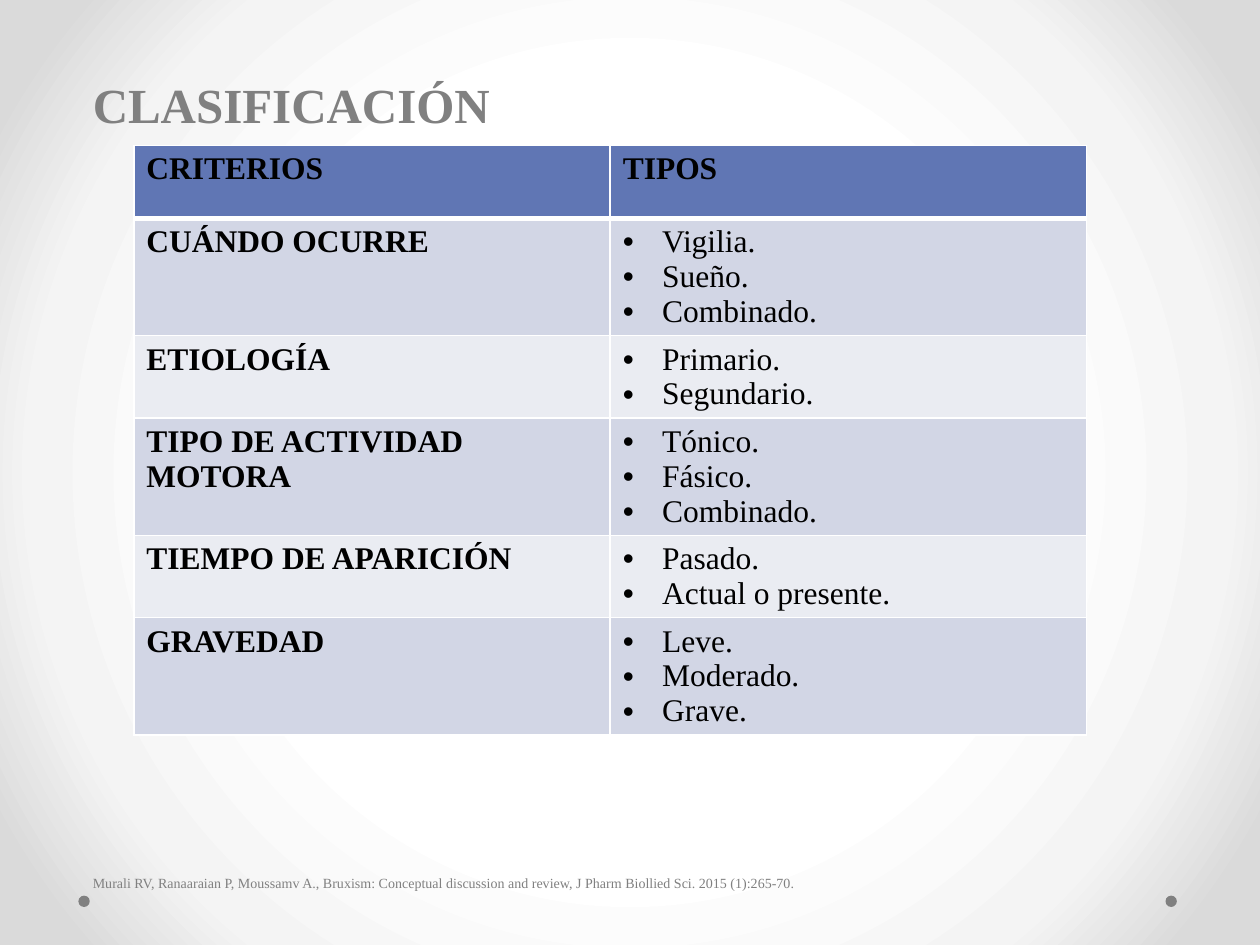
"""Build the bruxism classification slide with its criteria table and source line."""
from lxml.etree import SubElement
from pptx import Presentation
from pptx.dml.color import RGBColor
from pptx.enum.shapes import MSO_SHAPE as Preset
from pptx.enum.text import MSO_ANCHOR as Anchor, MSO_AUTO_SIZE as AutoSize, PP_ALIGN as Align
from pptx.oxml.ns import qn
from pptx.util import Pt

CRITERIA = [
    ("CUÁNDO OCURRE", ["Vigilia.", "Sueño.", "Combinado."]),
    ("ETIOLOGÍA", ["Primario.", "Segundario."]),
    ("TIPO DE ACTIVIDAD MOTORA", ["Tónico.", "Fásico.", "Combinado."]),
    ("TIEMPO DE APARICIÓN", ["Pasado.", "Actual o presente."]),
    ("GRAVEDAD", ["Leve.", "Moderado.", "Grave."]),
]
CITATION = ("Murali RV, Ranaaraian P, Moussamv A., Bruxism: Conceptual discussion and review, "
            "J Pharm Biollied Sci. 2015 (1):265-70.")


def color(value):
    return RGBColor.from_string(value)


def apply(target, values):
    for name, value in values.items():
        setattr(target, name, value)


def add_element(parent, tag, **attributes):
    return SubElement(parent, qn(tag), attributes)


def add_solid(parent, value):
    add_element(add_element(parent, "a:solidFill"), "a:srgbClr", val=value)


class SlideBuilder:
    FONT, GRAY, BLACK, WHITE = "Times New Roman", "808080", "000000", "FFFFFF"
    HEADER, BANDS = "6076B4", ("D2D6E5", "EAECF2")
    HEADER_HEIGHT, LINE_HEIGHT, CELL_PADDING = 41.8, 19.9, 7.2
    BULLET_INDENT = 22.5
    FRAME = {"word_wrap": True, "auto_size": AutoSize.NONE, "vertical_anchor": Anchor.MIDDLE,
             "margin_left": 0, "margin_right": 0, "margin_top": 0, "margin_bottom": 0}
    PARAGRAPH = {"alignment": Align.LEFT, "space_before": Pt(0), "space_after": Pt(0)}

    def __init__(self, deck):
        self.slide = deck.slides.add_slide(deck.slide_layouts[1])

    def background(self, stops):
        self.slide.background.fill.solid()
        properties = next(self.slide.element.iter(qn("p:bgPr")))
        properties.remove(properties.find(qn("a:solidFill")))
        gradient = add_element(properties, "a:gradFill", rotWithShape="1")
        properties.insert(0, gradient)
        stop_list = add_element(gradient, "a:gsLst")
        for position, value in stops:
            stop = add_element(stop_list, "a:gs", pos=str(position * 1000))
            add_element(stop, "a:srgbClr", val=value)
        circle = add_element(gradient, "a:path", path="circle")
        add_element(circle, "a:fillToRect", **dict.fromkeys("ltrb", "50000"))

    def dot(self, left, top, size):
        dot = self.slide.shapes.add_shape(Preset.OVAL, Pt(left), Pt(top), Pt(size), Pt(size))
        dot.shadow.inherit = False
        dot.fill.solid()
        dot.fill.fore_color.rgb = color(self.GRAY)
        dot.line.fill.background()

    def add_text(self, paragraph, text, size, value, bold=False, bulleted=False):
        run = paragraph.add_run()
        run.text = text
        apply(run.font, {"name": self.FONT, "size": Pt(size), "bold": bold})
        run.font.color.rgb = color(value)
        apply(paragraph, self.PARAGRAPH)
        properties = paragraph._p.get_or_add_pPr()
        indent = Pt(self.BULLET_INDENT) if bulleted else 0
        properties.set("marL", str(indent))
        properties.set("indent", str(-indent))
        if bulleted:
            add_element(properties, "a:buFont", typeface="Arial")
            add_element(properties, "a:buChar", char="•")
        else:
            add_element(properties, "a:buNone")

    def placeholder(self, index, box, text, size, bold=False):
        holder = self.slide.placeholders[index]
        apply(holder, dict(zip(("left", "top", "width", "height"), map(Pt, box))))
        apply(holder.text_frame, self.FRAME)
        self.add_text(holder.text_frame.paragraphs[0], text, size, self.GRAY, bold)

    def cell(self, cell, lines, fill, bottom=1, **style):
        properties = cell._tc.get_or_add_tcPr()
        for side, width in zip("LRTB", (1, 1, 1, bottom)):
            border = add_element(properties, f"a:ln{side}", w=str(Pt(width)))
            add_solid(border, self.WHITE)
        cell.fill.solid()
        cell.fill.fore_color.rgb = color(fill)
        for number, line in enumerate(lines):
            frame = cell.text_frame
            paragraph = frame.add_paragraph() if number else frame.paragraphs[0]
            self.add_text(paragraph, line, 18, self.BLACK, **style)

    def table(self, left, top, width, headings, criteria):
        heights = [self.HEADER_HEIGHT] + [
            self.CELL_PADDING + self.LINE_HEIGHT * len(types) for _, types in criteria]
        table = self.slide.shapes.add_table(
            len(heights), len(headings), Pt(left), Pt(top), Pt(width), Pt(sum(heights))).table
        for row, height in zip(table.rows, heights):
            row.height = Pt(height)
        for column, heading in enumerate(headings):
            self.cell(table.cell(0, column), [heading], self.HEADER, bottom=3, bold=True)
        for row, (criterion, types) in enumerate(criteria, 1):
            band = self.BANDS[(row - 1) % 2]
            self.cell(table.cell(row, 0), [criterion], band, bold=True)
            self.cell(table.cell(row, 1), types, band, bulleted=True)


def main():
    deck = Presentation()
    apply(deck, {"slide_width": Pt(720), "slide_height": Pt(540)})
    builder = SlideBuilder(deck)
    builder.background([(50, "FFFFFF"), (76, "F4F4F4"), (92, "DADADA")])
    for left in (44.8, 666):
        builder.dot(left, 511.8, 6.5)
    builder.table(76.5, 83, 544.4, ("CRITERIOS", "TIPOS"), CRITERIA)
    builder.placeholder(0, (53, 43.5, 560, 32), "CLASIFICACIÓN", 28, bold=True)
    builder.placeholder(1, (53, 499, 560, 11), CITATION, 8)
    deck.save("out.pptx")


if __name__ == "__main__":
    main()
